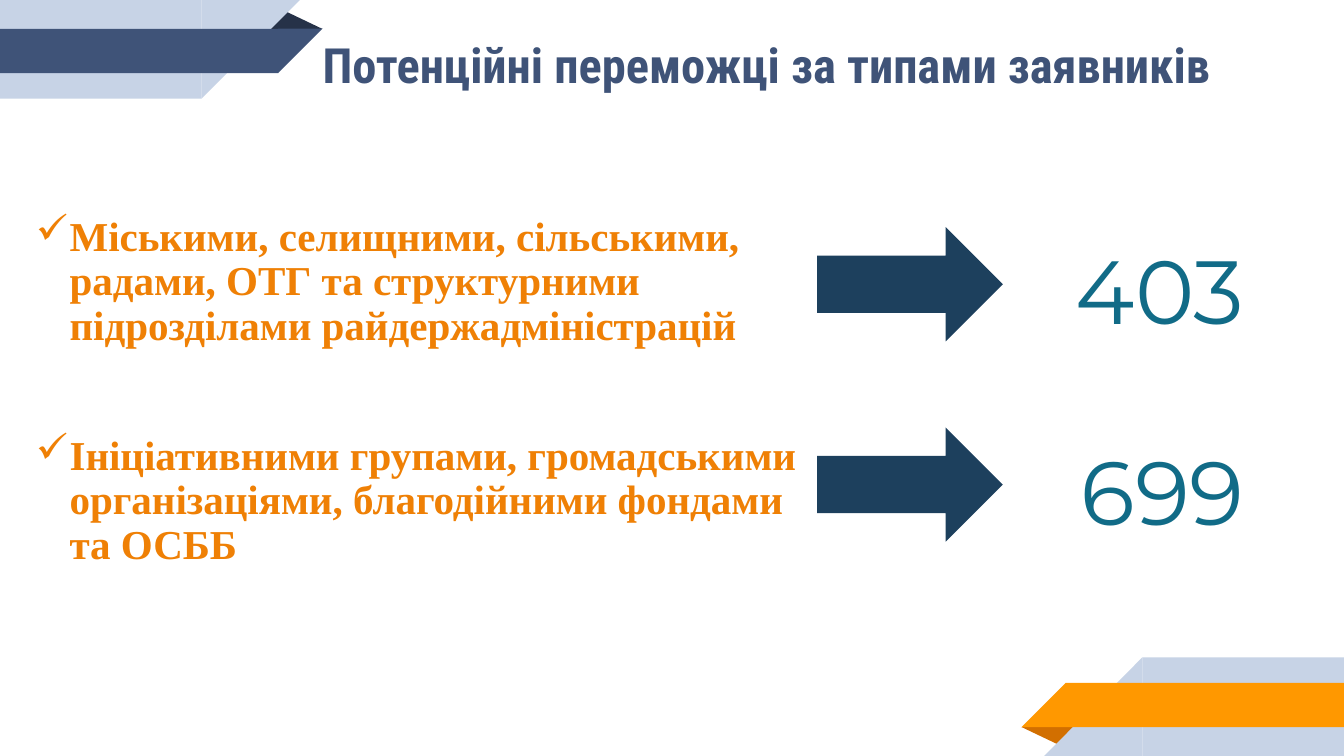
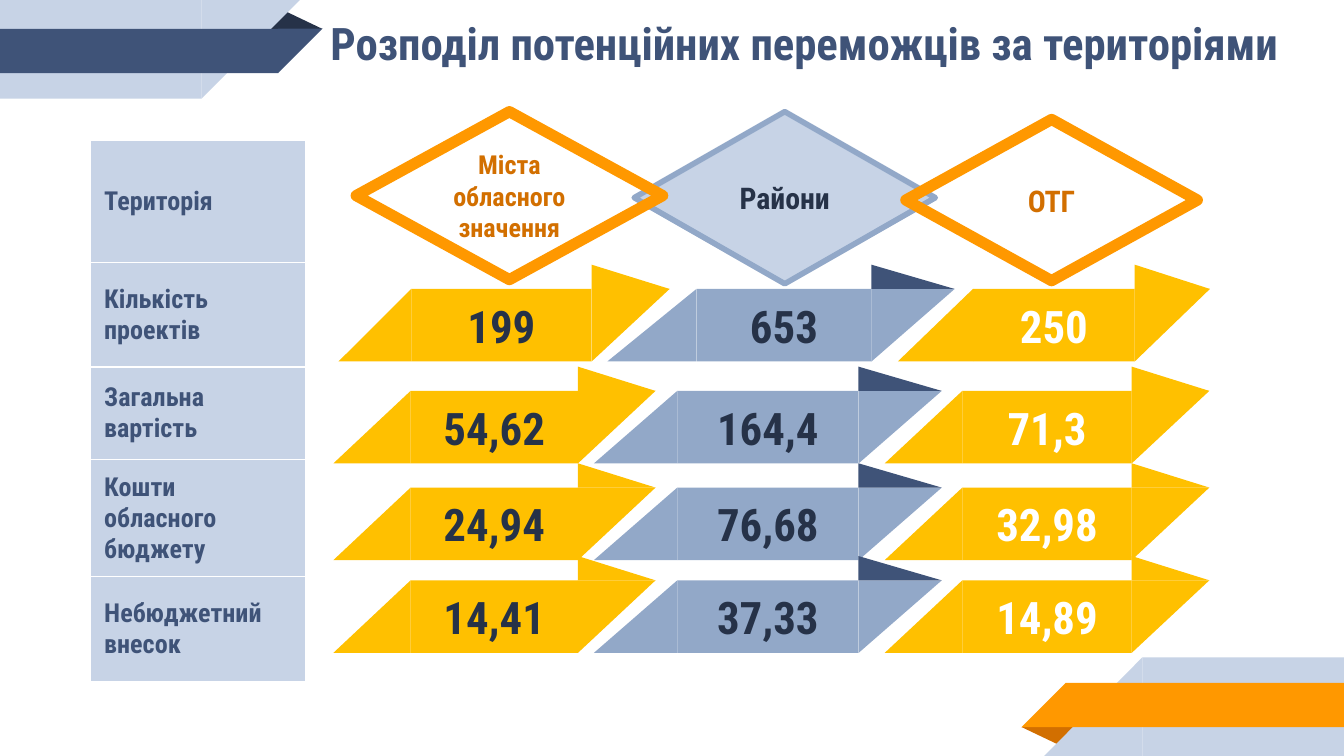
from lxml import etree
from pptx import Presentation
from pptx import util as u
from pptx.dml import color
from pptx.enum import shapes, text
from pptx.oxml import ns

Pt = u.Pt
WIDTH, HEIGHT = 720, 405
KIND = shapes.MSO_SHAPE
HEAD_FONT = "Roboto Condensed"
COLORS = {
    "navy": "3F5378", "ink": "263248", "pale": "C7D3E6", "steel": "92A8C8",
    "orange": "FF9800", "rust": "D26F00", "gold": "FFC000", "white": "FFFFFF",
    "claim": "EF8005", "arrow": "1D405D", "teal": "116B87",
}
CLAIMS = [
    "Міськими, селищними, сільськими, радами, ОТГ та структурними підрозділами райдержадміністрацій",
    "Ініціативними групами, громадськими організаціями, благодійними фондами та ОСББ",
]
COUNTS = [("403", 121.7, 537, 169), ("699", 229, 525.6, 194.4)]
ROW_LABELS = [("Територія", 65.5), ("Кількість проектів", 56.2), ("Загальна вартість", 49.7),
              ("Кошти обласного бюджету", 62.6), ("Небюджетний внесок", 56.2)]
DIAMONDS = [
    ("Райони", (339.8, 59.8, 161.3, 92.2), "pale", ("steel", 3), 16, "ink"),
    ("Міста обласного значення", (190.8, 59.8, 164.2, 90), None, ("orange", 6), 14, "rust"),
    ("ОТГ", (485.3, 64, 156.2, 86.4), None, ("orange", 6), 16, "rust"),
]
RIBBON_STYLES = [("gold", "gold", "ink"), ("steel", "navy", "ink"), ("gold", "gold", "white")]
FIRST_ROW = [(181.4, 39, 96.5, 41.8), (325.4, 47.8, 93.6, 44.6), (481, 40.3, 86.6, 40.3)]
OTHER_ROWS = [(178.6, 41.4, 89.6, 41.6), (318.2, 44.7, 97, 44.6), (474, 41.6, 90.7, 41.6)]
VALUE_ROWS = [
    (154.8, FIRST_ROW, ("199", "653", "250")),
    (209.4, OTHER_ROWS, ("54,62", "164,4", "71,3")),
    (261.2, OTHER_ROWS, ("24,94", "76,68", "32,98")),
    (310.9, OTHER_ROWS, ("14,41", "37,33", "14,89")),
]


def rgb(name):
    """Return the named colour."""
    return color.RGBColor.from_string(COLORS[name])


def points(values):
    """Convert numbers to point lengths."""
    return [Pt(value) for value in values]


def write(para, content, size=24, font=HEAD_FONT, tint="navy", bold=True, align=None):
    """Add one formatted run of text to a paragraph."""
    para.alignment = align
    span = para.add_run()
    span.text = content
    span.font.size = Pt(size)
    span.font.name = font
    span.font.bold = bold
    span.font.color.rgb = rgb(tint)


def center(box, content, pad=7.2, **style):
    """Write centred text in the middle of a box."""
    frame = box.text_frame
    frame.word_wrap = True
    frame.vertical_anchor = text.MSO_ANCHOR.MIDDLE
    frame.margin_left = frame.margin_right = Pt(7.2)
    frame.margin_top = frame.margin_bottom = Pt(pad)
    write(frame.paragraphs[0], content, align=text.PP_ALIGN.CENTER, **style)


def add_shape(parent, kind, at, fill=None, line=None, angle=0, adjust=None):
    """Add a flat preset shape; right triangles are mirrored."""
    shape = parent.shapes.add_shape(kind, *points(at))
    shape.shadow.inherit = False
    shape.rotation = angle
    if kind == KIND.RIGHT_TRIANGLE:
        shape._element.spPr.xfrm.set("flipH", "1")
    if adjust is not None:
        shape.adjustments[0] = adjust
    if fill:
        shape.fill.solid()
        shape.fill.fore_color.rgb = rgb(fill)
    else:
        shape.fill.background()
    if line:
        shape.line.color.rgb = rgb(line[0])
        shape.line.width = Pt(line[1])
    else:
        shape.line.fill.background()
    return shape


def add_corner(page, band, fold, turned=False):
    """Draw the bottom-right corner band, or its half turn at the top left."""
    pieces = [
        (KIND.ISOSCELES_TRIANGLE, (547.2, 389.5, 31, 10), fold, 180, 0.324),
        (KIND.RECTANGLE, (612, 352.2, 108, 52.8), "pale", 0, None),
        (KIND.RIGHT_TRIANGLE, (559.4, 352.2, 52.6, 52.8), "pale", 0, None),
        (KIND.RECTANGLE, (571, 365.8, 149, 23.8), band, 0, None),
        (KIND.RIGHT_TRIANGLE, (547.2, 365.8, 23.8, 23.8), band, 0, None),
    ]
    group = page.shapes.add_group_shape()
    for kind, (left, top, width, height), fill, angle, adjust in pieces:
        if turned:
            left, top = WIDTH - left - width, HEIGHT - top - height
            angle = (angle + 180) % 360
        add_shape(group, kind, (left, top, width, height), fill, angle=angle, adjust=adjust)


def add_page(deck):
    """Add a blank page with both corner bands."""
    page = deck.slides.add_slide(deck.slide_layouts[6])
    add_corner(page, "orange", "rust")
    add_corner(page, "navy", "ink", turned=True)
    return page


def add_text(page, at, content, **style):
    """Add a text box with one centred paragraph."""
    center(page.shapes.add_textbox(*points(at)), content, **style)


def add_checklist(page, at, items):
    """Add a list with check mark bullets."""
    frame = page.shapes.add_textbox(*points(at)).text_frame
    frame.word_wrap = True
    for index, item in enumerate(items):
        para = frame.add_paragraph() if index else frame.paragraphs[0]
        para.line_spacing = 0.9
        if index:
            para.space_before = Pt(46)
        props = para._p.get_or_add_pPr()
        props.set("marL", str(Pt(18)))
        props.set("indent", str(-Pt(18)))
        etree.SubElement(props, ns.qn("a:buChar")).set("char", "✓")
        write(para, item, size=22, font="Times New Roman", tint="claim")


def add_ribbon(page, value, top, spans, style):
    """Draw a slanted ribbon with a folded tip and its value."""
    left, lead, body, tail = spans
    fill, fold, tint = style
    start, end, height, tip = left + lead, left + lead + body, 38.9, 13
    group = page.shapes.add_group_shape()
    plate = add_shape(group, KIND.RECTANGLE, (start, top, body, height), fill)
    center(plate, value, tint=tint)
    add_shape(group, KIND.RIGHT_TRIANGLE, (left, top, lead, height), fill)
    add_shape(group, KIND.RIGHT_TRIANGLE, (end, top, tail, height), fill, angle=180)
    add_shape(group, KIND.ISOSCELES_TRIANGLE, (end, top - tip, tail, tip), fold, adjust=0)


def add_borders(cell, tint, width):
    """Give a table cell a thin line on each side."""
    props = cell._tc.get_or_add_tcPr()
    for index, side in enumerate(("lnL", "lnR", "lnT", "lnB")):
        line = etree.Element(ns.qn(f"a:{side}"), w=str(Pt(width)))
        fill = etree.SubElement(line, ns.qn("a:solidFill"))
        etree.SubElement(fill, ns.qn("a:srgbClr"), val=COLORS[tint])
        props.insert(index, line)


def add_labels(page, left, top, width, rows):
    """Add the one-column table of row labels."""
    total = sum(height for _, height in rows)
    table = page.shapes.add_table(len(rows), 1, *points((left, top, width, total))).table
    table.first_row = table.horz_banding = False
    for index, (label, height) in enumerate(rows):
        table.rows[index].height = Pt(height)
        cell = table.cell(index, 0)
        cell.fill.solid()
        cell.fill.fore_color.rgb = rgb("pale")
        cell.vertical_anchor = text.MSO_ANCHOR.MIDDLE
        cell.margin_left = cell.margin_right = Pt(7.2)
        cell.margin_top = cell.margin_bottom = Pt(5)
        add_borders(cell, "white", 0.75)
        write(cell.text_frame.paragraphs[0], label, size=14)


def build_applicants(deck):
    """Build the page of winners by applicant type."""
    page = add_page(deck)
    add_checklist(page, (12.2, 112.3, 425.5, 233.3), CLAIMS)
    for count, top, left, width in COUNTS:
        add_shape(page, KIND.RIGHT_ARROW, (437.8, top, 99.4, 61.2), "arrow")
        add_text(page, (left, top, width, 66.2), count, pad=3.6, size=48,
                 font="Montserrat", tint="teal", bold=False)
    add_text(page, (144, 11.5, 534.2, 45.4), "Потенційні переможці за типами заявників", size=26)


def build_territories(deck):
    """Build the page of winners by territory."""
    page = add_page(deck)
    for label, at, fill, line, size, tint in DIAMONDS:
        center(add_shape(page, KIND.DIAMOND, at, fill, line), label, size=size, tint=tint)
    for top, columns, values in VALUE_ROWS:
        for value, spans, style in zip(values, columns, RIBBON_STYLES):
            add_ribbon(page, value, top, spans, style)
    add_text(page, (167, 0.7, 527.8, 44), "Розподіл потенційних переможців за територіями")
    add_labels(page, 48.6, 75, 115, ROW_LABELS)


def main():
    """Build and save the deck."""
    deck = Presentation()
    deck.slide_width, deck.slide_height = Pt(WIDTH), Pt(HEIGHT)
    build_applicants(deck)
    build_territories(deck)
    deck.save("out.pptx")


if __name__ == "__main__":
    main()
